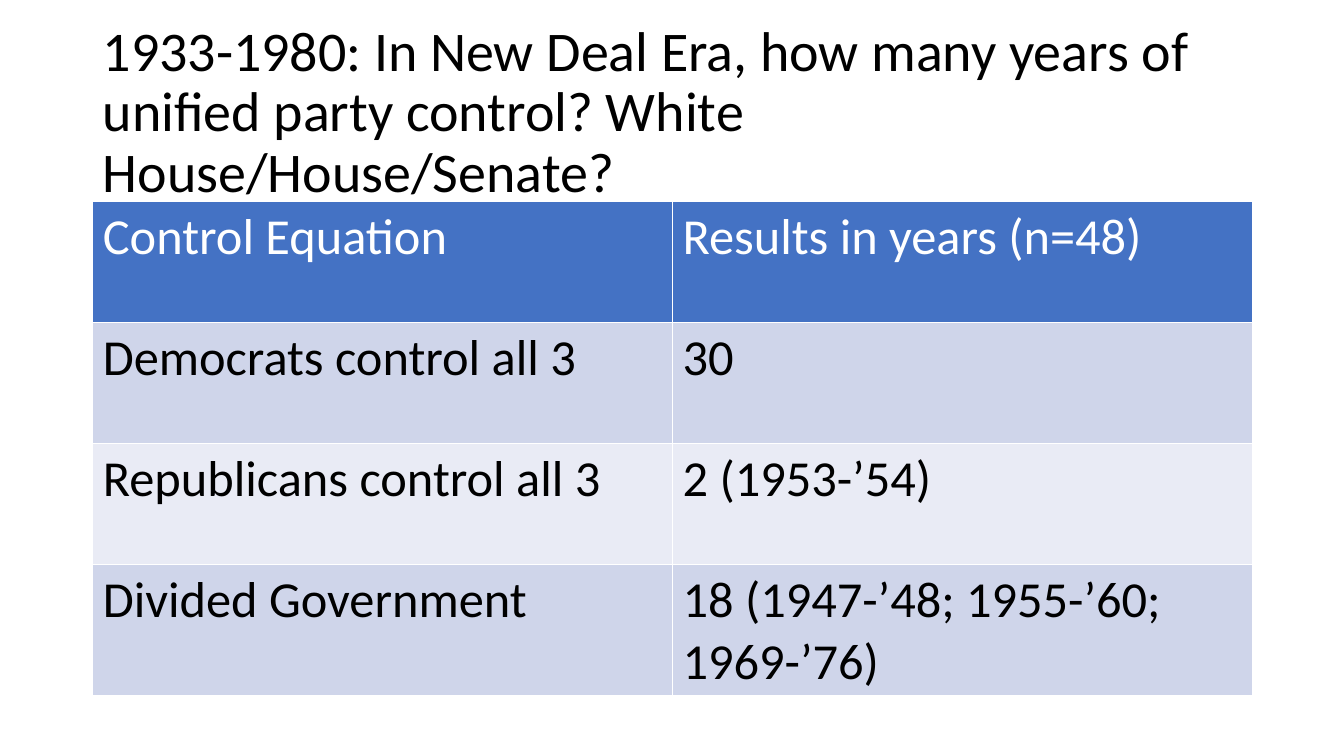
from dataclasses import dataclass

from pptx import Presentation
from pptx.dml.color import RGBColor
from pptx.enum.text import MSO_ANCHOR
from pptx.slide import Slide
from pptx.table import _Cell
from pptx.util import Inches, Pt

MIDDLE = MSO_ANCHOR.MIDDLE
BLACK = RGBColor(0x00, 0x00, 0x00)
WHITE = RGBColor(0xFF, 0xFF, 0xFF)
HEADER_BLUE = RGBColor(0x44, 0x72, 0xC4)
BAND_DARK = RGBColor(0xCF, 0xD5, 0xEA)
BAND_LIGHT = RGBColor(0xE9, 0xEB, 0xF5)
FONT = "Calibri"
TITLE = (
    "1933-1980: In New Deal Era, how many years of unified party control? "
    "White House/House/Senate?"
)


@dataclass(frozen=True)
class ControlRow:
    """One row of the party control table."""

    equation: str
    result: str
    fill: RGBColor
    color: RGBColor = BLACK


ROWS = [
    ControlRow("Control Equation", "Results in years (n=48)", HEADER_BLUE, WHITE),
    ControlRow("Democrats control all 3", "30", BAND_DARK),
    ControlRow("Republicans control all 3", "2 (1953-’54)", BAND_LIGHT),
    ControlRow("Divided Government", "18 (1947-’48; 1955-’60; 1969-’76)", BAND_DARK),
]


def add_title(slide: Slide) -> None:
    """Add the question above the table."""
    box = slide.shapes.add_textbox(Inches(0.92), Inches(0.4), Inches(11.71), Inches(1.45))
    frame = box.text_frame
    frame.word_wrap = True
    frame.vertical_anchor = MIDDLE
    paragraph = frame.paragraphs[0]
    paragraph.text = TITLE
    paragraph.line_spacing = 0.9
    paragraph.font.name = FONT
    paragraph.font.size = Pt(40)
    paragraph.font.color.rgb = BLACK


def fill_cell(cell: _Cell, text: str, row: ControlRow) -> None:
    """Write and colour one table cell."""
    cell.fill.solid()
    cell.fill.fore_color.rgb = row.fill
    paragraph = cell.text_frame.paragraphs[0]
    paragraph.text = text
    paragraph.font.name = FONT
    paragraph.font.size = Pt(36)
    paragraph.font.bold = False
    paragraph.font.color.rgb = row.color


def add_control_table(slide: Slide) -> None:
    """Add the table of years under each kind of control."""
    frame = slide.shapes.add_table(
        len(ROWS), 2, Inches(0.92), Inches(2), Inches(11.5), Inches(1.2 * len(ROWS))
    )
    for index, row in enumerate(ROWS):
        for column, text in enumerate((row.equation, row.result)):
            fill_cell(frame.table.cell(index, column), text, row)


def main() -> None:
    """Build and save the presentation."""
    presentation = Presentation()
    presentation.slide_width = Inches(13.33)
    presentation.slide_height = Inches(7.5)
    slide = presentation.slides.add_slide(presentation.slide_layouts[6])
    add_title(slide)
    add_control_table(slide)
    presentation.save("out.pptx")


if __name__ == "__main__":
    main()
